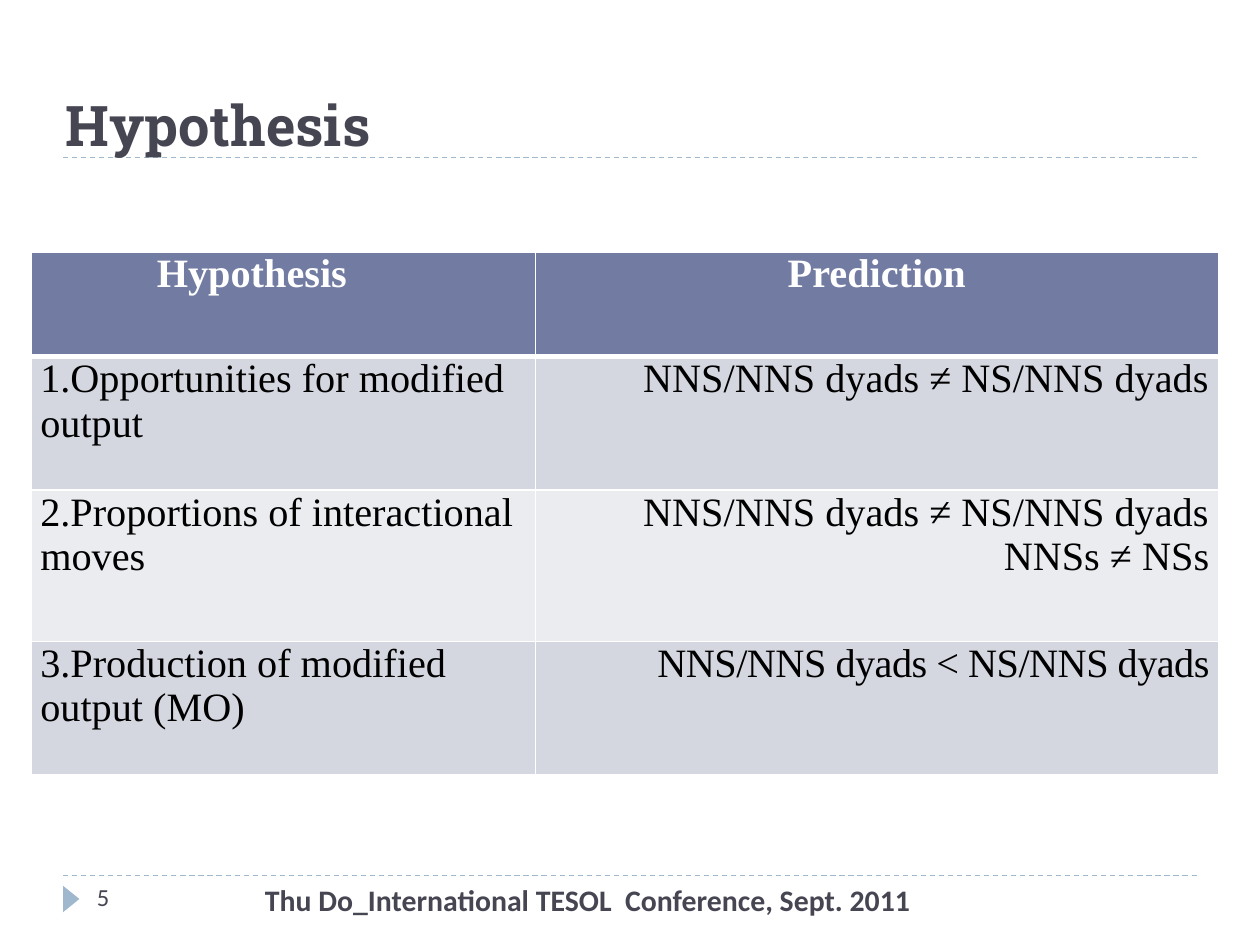
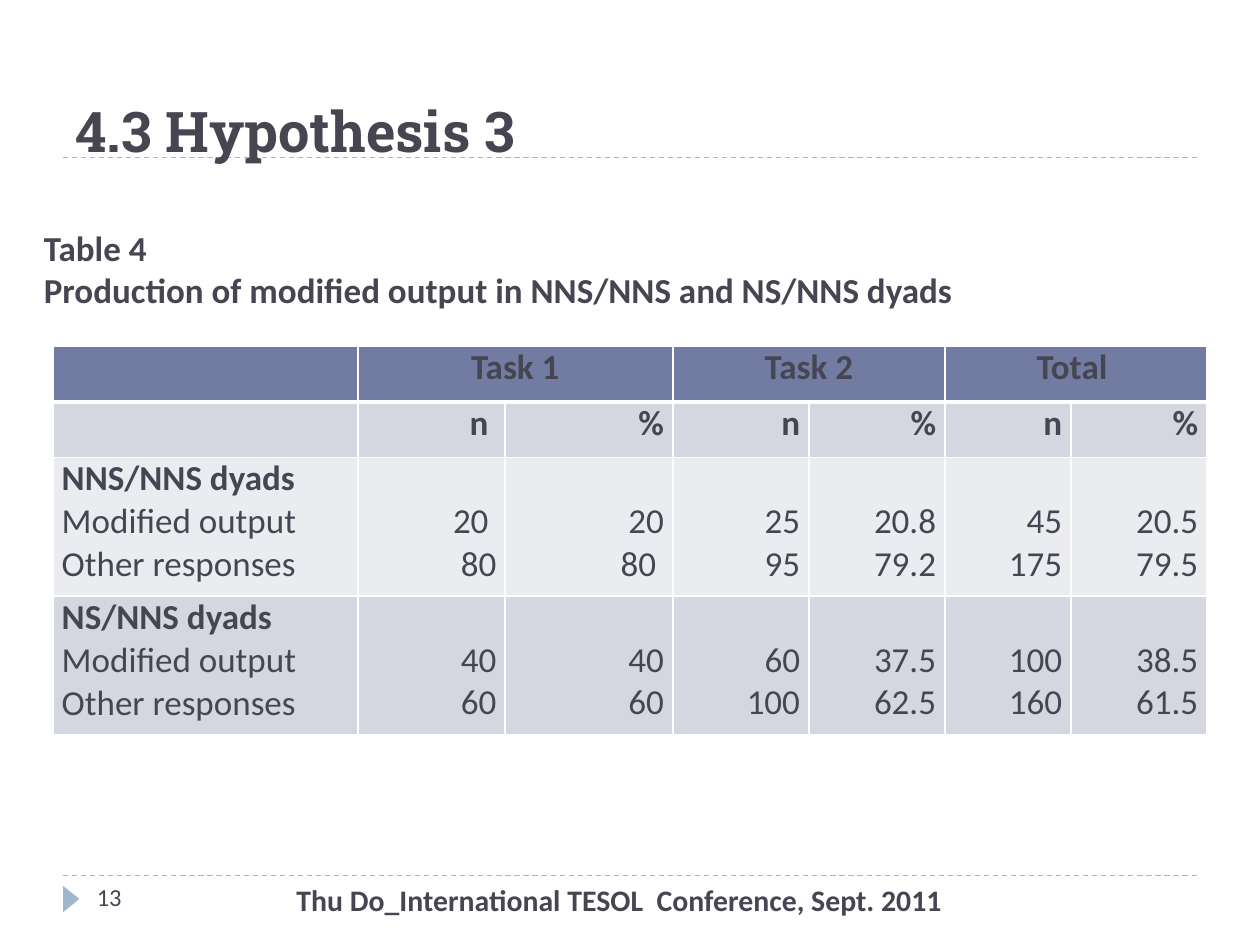
import pptx
import pptx.util
import pptx.dml.color
import pptx.enum.dml
import pptx.enum.shapes
import pptx.enum.text
import pptx.oxml
import pptx.oxml.ns

# Shared look
COLORS = {"ink": "464653", "rule": "9FB8CD", "header": "727CA3", "dark": "D5D7E0",
          "light": "EBECF0", "white": "FFFFFF", "black": "000000"}
TITLE_FONT, BODY_FONT, TABLE_FONT = "Roboto Slab", "Calibri", "Times New Roman"
FOOTER = "Thu Do_International TESOL  Conference, Sept. 2011"
WIDTH, HEIGHT = 10, 7.5
MARGIN = 0.5
TITLE_RULE, FOOTER_RULE = 1.25, 6.95
CELL_INSET = 0.07
NUMBER_DROP = 0.34  # one 20 pt line, so figures sit beside their labels

# Content
BOTH_DYADS = "NNS/NNS dyads ≠ NS/NNS dyads"
RESPONSES = ["Modified output", "Other responses"]

HYPOTHESIS = {
    "title": "Hypothesis", "title_at": (0.42, 0.5), "page": "5", "footer_at": (0.5, 8.33),
    "table": {
        "at": (0.25, 2), "columns": [4, 5.42], "heights": [0.83, 1.06, 1.2, 1.06],
        "size": 23, "font": TABLE_FONT, "header_color": "white", "body_color": "black",
        "rows": [
            [["Hypothesis"], ["Prediction"]],
            [["1.Opportunities for modified output"], [BOTH_DYADS]],
            [["2.Proportions of interactional moves"], [BOTH_DYADS, "NNSs ≠ NSs"]],
            [["3.Production of modified output (MO)"], ["NNS/NNS dyads < NS/NNS dyads"]],
        ],
    },
}

HYPOTHESIS_3 = {
    "title": "4.3 Hypothesis 3", "title_at": (0.5, 0.55), "page": "13", "footer_at": (1.33, 7.17),
    "caption": ["Table 4", "Production of modified output in NNS/NNS and NS/NNS dyads"],
    "table": {
        "at": (0.42, 2.75), "columns": [2.42, 1.17, 1.33, 1.08, 1.08, 1, 1.08],
        "heights": [0.44, 0.44, 1.1, 1.1],
        "size": 20, "font": BODY_FONT, "header_color": "ink", "body_color": "ink",
        "rows": [
            [[], ["Task 1"], [], ["Task 2"], [], ["Total "], []],
            [[], ["n "], ["%"], ["n"], ["%"], ["n"], ["%"]],
            [["NNS/NNS dyads"] + RESPONSES, ["20 ", "80"], ["20", "80 "], ["25", "95"],
             ["20.8", "79.2"], ["45", "175"], ["20.5", "79.5"]],
            [["NS/NNS dyads"] + RESPONSES, ["40", "60"], ["40", "60"], ["60", "100"],
             ["37.5", "62.5"], ["100", "160"], ["38.5", "61.5"]],
        ],
        "spans": [1, 3, 5],
    },
}


def inches(*values):
    return [pptx.util.Inches(value) for value in values]


def rgb(name):
    return pptx.dml.color.RGBColor.from_string(COLORS[name])


def write(frame, lines, size=20, font=BODY_FONT, color="ink", bold_lines=0,
          align="LEFT", spacing=0):
    """Fill a text frame; the first bold_lines lines are bold."""
    frame.word_wrap = True
    for index, line in enumerate(lines):
        paragraph = frame.paragraphs[0] if index == 0 else frame.add_paragraph()
        paragraph.alignment = getattr(pptx.enum.text.PP_ALIGN, align)
        run = paragraph.add_run()
        run.text = line
        run.font.size = pptx.util.Pt(size)
        run.font.name = font
        run.font.bold = index < bold_lines
        run.font.color.rgb = rgb(color)
        if spacing:
            run.font._element.set("spc", str(int(spacing * 100)))


def add_text(slide, lines, left, top, width, height, **text_format):
    box = slide.shapes.add_textbox(*inches(left, top, width, height))
    write(box.text_frame, lines, **text_format)
    return box.text_frame


def add_rule(slide, y):
    rule = slide.shapes.add_connector(pptx.enum.shapes.MSO_CONNECTOR.STRAIGHT,
                                      *inches(MARGIN, y, WIDTH - MARGIN, y))
    rule.line.color.rgb = rgb("rule")
    rule.line.width = pptx.util.Pt(0.75)
    rule.line.dash_style = pptx.enum.dml.MSO_LINE.DASH
    rule._element.spPr.append(pptx.oxml.parse_xml(
        f'<a:effectLst {pptx.oxml.ns.nsdecls("a")}/>'))


def add_frame(slide, content):
    """Rules, page marker, title and footer."""
    add_rule(slide, FOOTER_RULE)
    add_rule(slide, TITLE_RULE)
    marker = slide.shapes.add_shape(pptx.enum.shapes.MSO_SHAPE.ISOSCELES_TRIANGLE,
                                    *inches(0.46, 7.07, 0.21, 0.13))
    marker.rotation = 90
    marker.shadow.inherit = False
    marker.fill.solid()
    marker.fill.fore_color.rgb = rgb("rule")
    marker.line.fill.background()

    title = add_text(slide, [content["title"]], *content["title_at"], WIDTH - 2 * MARGIN, 0.75,
                     size=32, font=TITLE_FONT, bold_lines=1)
    title.vertical_anchor = pptx.enum.text.MSO_ANCHOR.BOTTOM
    title.margin_top = title.margin_bottom = 0

    footer_left, footer_width = content["footer_at"]
    add_text(slide, [FOOTER], footer_left, FOOTER_RULE, footer_width, 0.4,
             size=17, bold_lines=1, align="CENTER")
    add_text(slide, [content["page"]], 0.67, FOOTER_RULE, 2.17, 0.4, size=14)


def style_cell(cell, fill, bottom=1):
    """White borders, then the fill."""
    properties = cell._tc.get_or_add_tcPr()
    for side, points in (("L", 1), ("R", 1), ("T", 1), ("B", bottom)):
        properties.append(pptx.oxml.parse_xml(
            f'<a:ln{side} {pptx.oxml.ns.nsdecls("a")} w="{pptx.util.Pt(points)}"><a:solidFill>'
            f'<a:srgbClr val="{COLORS["white"]}"/></a:solidFill></a:ln{side}>'))
    cell.fill.solid()
    cell.fill.fore_color.rgb = rgb(fill)
    cell.margin_left = cell.margin_right = pptx.util.Inches(CELL_INSET)
    cell.margin_top = cell.margin_bottom = 0


def add_grid(slide, content):
    """Header row, then alternating bands: labels left, values right."""
    columns, heights, rows = content["columns"], content["heights"], content["rows"]
    grid = slide.shapes.add_table(len(rows), len(columns), *inches(
        *content["at"], sum(columns), sum(heights))).table
    for column, width in zip(grid.columns, columns):
        column.width = pptx.util.Inches(width)
    for row, height in zip(grid.rows, heights):
        row.height = pptx.util.Inches(height)

    for r, row in enumerate(rows):
        header = r == 0
        fill = "header" if header else ("light", "dark")[r % 2]
        grouped = len(row[0]) > 1  # a bold group name above its labels
        subheader = not header and not row[0]
        for c, lines in enumerate(row):
            cell = grid.cell(r, c)
            style_cell(cell, fill, bottom=3 if header else 1)
            if grouped and c:
                cell.margin_top = pptx.util.Inches(NUMBER_DROP)
            write(cell.text_frame, lines, size=content["size"], font=content["font"],
                  color=content["header_color" if header else "body_color"],
                  bold_lines=int(header or subheader or (grouped and c == 0)),
                  align="CENTER" if header else "RIGHT" if c else "LEFT",
                  spacing=-0.3 if "<" in "".join(lines) else 0)
    for c in content.get("spans", []):
        grid.cell(0, c).merge(grid.cell(0, c + 1))
    return grid


def main():
    deck = pptx.Presentation()
    deck.slide_width, deck.slide_height = inches(WIDTH, HEIGHT)
    blank = deck.slide_layouts[6]

    # Hypotheses and predictions
    predictions = deck.slides.add_slide(blank)
    add_frame(predictions, HYPOTHESIS)
    grid = add_grid(predictions, HYPOTHESIS["table"])
    grid.cell(0, 0).margin_right = pptx.util.Inches(0.57)  # heading sits left of centre

    # Results for hypothesis 3
    results = deck.slides.add_slide(blank)
    add_frame(results, HYPOTHESIS_3)
    add_grid(results, HYPOTHESIS_3["table"])
    add_text(results, HYPOTHESIS_3["caption"], 0.25, 1.75, 9.33, 0.77, bold_lines=2)

    deck.save("out.pptx")


if __name__ == "__main__":
    main()
